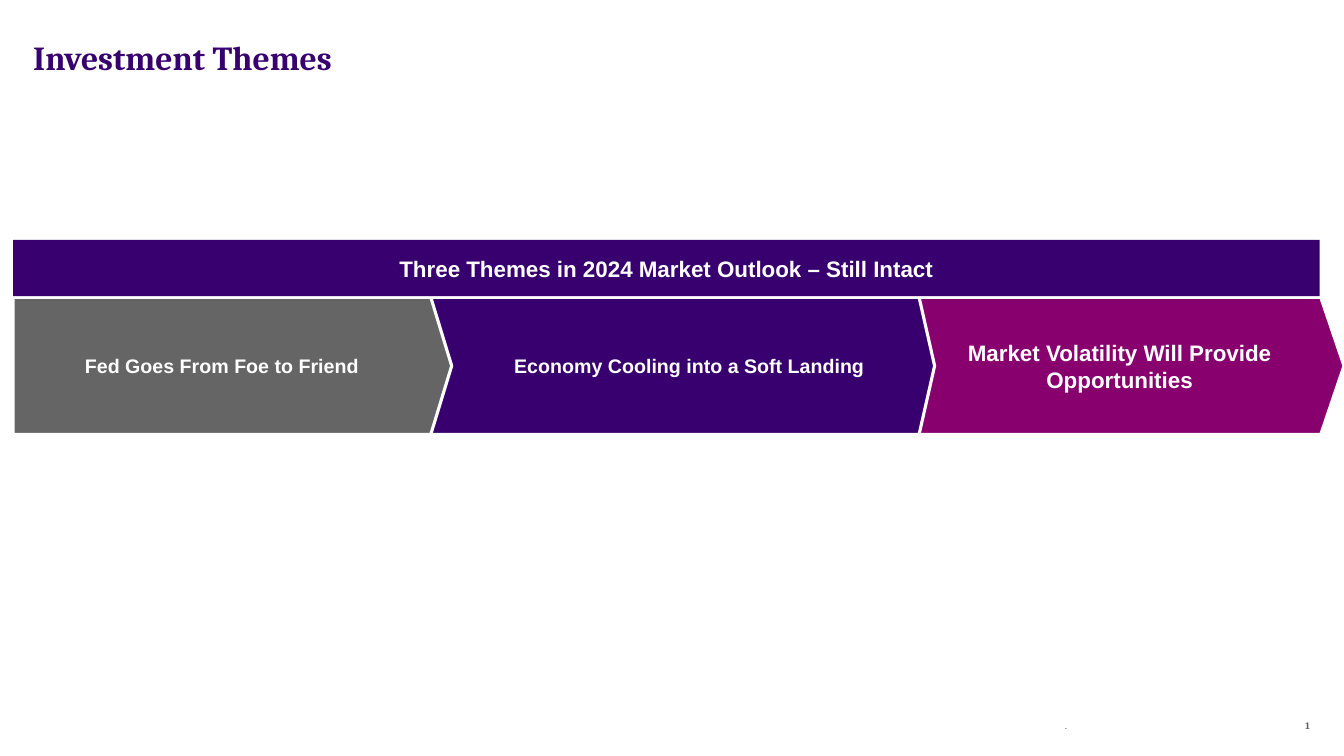
from dataclasses import dataclass
from pptx import Presentation
from pptx.dml.color import RGBColor
from pptx.enum.shapes import MSO_SHAPE
from pptx.enum.text import MSO_ANCHOR, PP_ALIGN
from pptx.util import Inches, Pt


@dataclass(frozen=True)
class Theme:
    purple: str = "37006E"
    plum: str = "87006E"
    gray: str = "656565"
    white: str = "FFFFFF"
    note: str = "595959"
    serif: str = "Cambria"
    sans: str = "Arial"
    title: int = 24
    large: int = 16
    body: int = 14
    small: int = 7


theme = Theme()


def write(shape, text, size, color, face=theme.sans, bold=True,
          align=PP_ALIGN.CENTER, anchor=MSO_ANCHOR.MIDDLE):
    """Fill a shape with one styled paragraph and return the paragraph."""
    frame = shape.text_frame
    frame.word_wrap = True
    frame.vertical_anchor = anchor
    para = frame.paragraphs[0]
    para.text = text
    para.alignment = align
    font = para.font
    font.name, font.size, font.bold = face, Pt(size), bold
    font.color.rgb = RGBColor.from_string(color)
    return para


def block(kind, left, top, width, height, color):
    """Add a filled shape without shadow or outline."""
    shape = slide.shapes.add_shape(
        kind, Inches(left), Inches(top), Inches(width), Inches(height))
    shape.shadow.inherit = False
    shape.fill.solid()
    shape.fill.fore_color.rgb = RGBColor.from_string(color)
    shape.line.fill.background()
    return shape


deck = Presentation()
deck.slide_width, deck.slide_height = Inches(13.33), Inches(7.5)
slide = deck.slides.add_slide(deck.slide_layouts[6])
boxes = slide.shapes

# Footer and title
mark = boxes.add_textbox(Inches(10.46), Inches(7.09), Inches(2.56), Inches(0.22))
write(mark, ".", theme.small, theme.note, bold=False,
      align=PP_ALIGN.LEFT, anchor=MSO_ANCHOR.TOP)

page = boxes.add_textbox(Inches(12.56), Inches(7.04), Inches(0.53), Inches(0.31))
write(page, "1", theme.small, theme.note, theme.serif, align=PP_ALIGN.RIGHT)

title = boxes.add_textbox(Inches(0.33), Inches(0.22), Inches(12.67), Inches(0.7))
title.text_frame.margin_left = 0
write(title, "Investment Themes", theme.title, theme.purple, theme.serif,
      align=PP_ALIGN.LEFT)

# Arrows run from right to left, so each tip lies over the next arrow
arrows = [
    ("Market Volatility Will Provide Opportunities",
     8.61, 4.72, 0.169, theme.plum, theme.large, 0.5),
    ("Economy Cooling into a Soft Landing",
     4.06, 5.21, 0.113, theme.purple, theme.body, 0.5),
    ("Fed Goes From Foe to Friend",
     0.13, 4.35, 0.152, theme.gray, theme.body, 0),
]
for text, left, width, tip, color, size, indent in arrows:
    arrow = block(MSO_SHAPE.RIGHT_ARROW, left, 2.95, width, 1.36, color)
    arrow.adjustments[0], arrow.adjustments[1] = 1, tip
    arrow.line.color.rgb = RGBColor.from_string(theme.white)
    arrow.line.width = Pt(2.25)
    frame = arrow.text_frame
    frame.margin_left = frame.margin_right = Inches(0.2)
    frame.margin_top = frame.margin_bottom = Inches(0.1)
    para = write(arrow, text, size, theme.white)
    props = para._p.get_or_add_pPr()
    props.set("marL", str(Inches(indent)))
    props.set("indent", "0")

banner = block(MSO_SHAPE.RECTANGLE, 0.13, 2.38, 12.96, 0.56, theme.purple)
write(banner, "Three Themes in 2024 Market Outlook – Still Intact",
      theme.large, theme.white)

deck.save("out.pptx")
